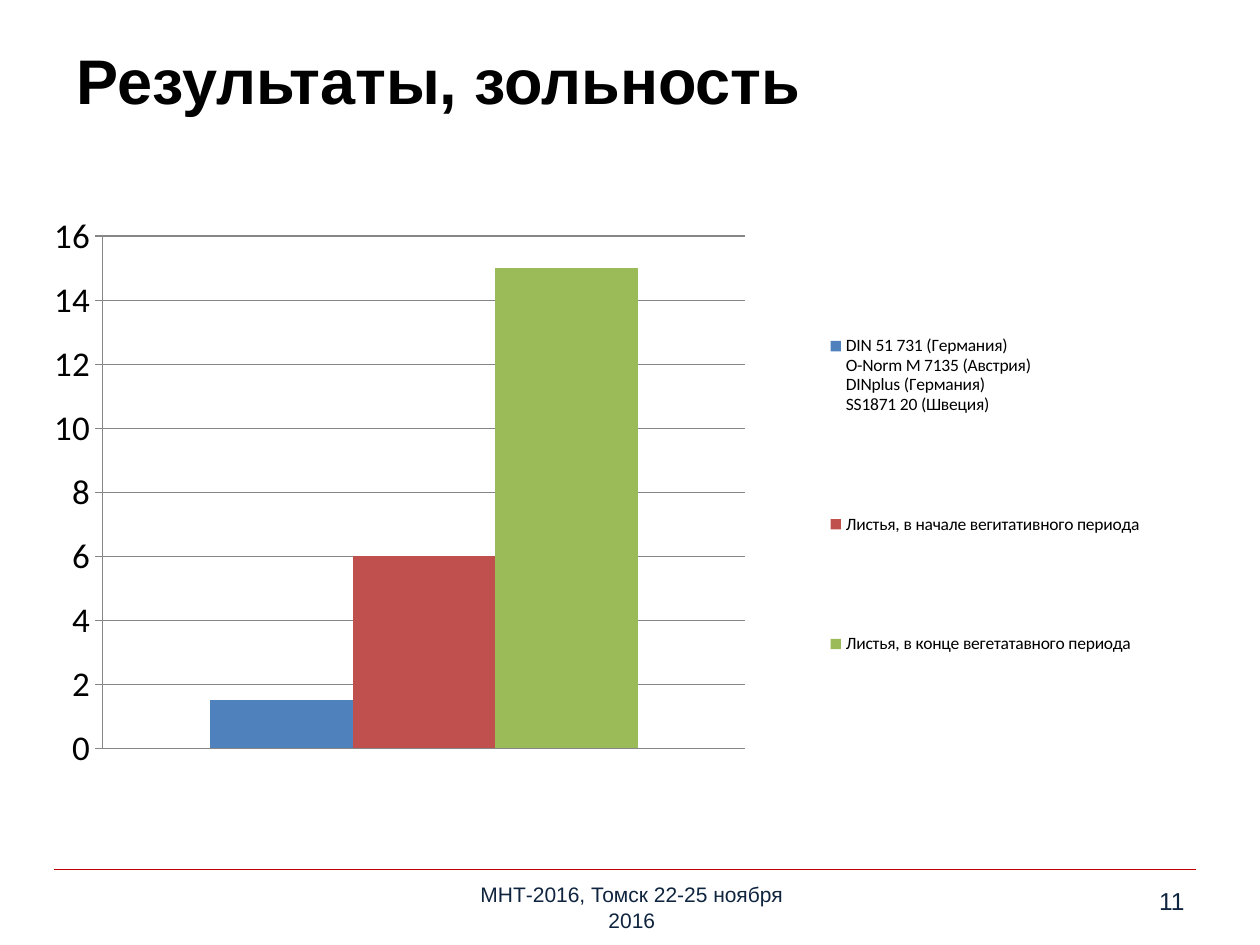
from dataclasses import dataclass

from lxml import etree
from pptx import Presentation
from pptx.chart.data import CategoryChartData
from pptx.dml.color import RGBColor
from pptx.enum.chart import XL_CHART_TYPE, XL_LEGEND_POSITION, XL_TICK_MARK
from pptx.enum.text import MSO_ANCHOR, PP_ALIGN
from pptx.oxml import parse_xml
from pptx.oxml.ns import nsdecls, qn
from pptx.util import Inches, Pt

BAR = XL_CHART_TYPE.COLUMN_CLUSTERED
SIDE = XL_LEGEND_POSITION.RIGHT
OUT = XL_TICK_MARK.OUTSIDE
MID, TOP = MSO_ANCHOR.MIDDLE, MSO_ANCHOR.TOP
LEFT, MIDST, RIGHT = PP_ALIGN.LEFT, PP_ALIGN.CENTER, PP_ALIGN.RIGHT

BLACK = RGBColor(0, 0, 0)
NAVY = RGBColor(0x0F, 0x24, 0x3E)
RED = RGBColor(0xC0, 0, 0)
GREY = RGBColor(0x86, 0x86, 0x86)
BLUE = RGBColor(0x4F, 0x81, 0xBD)
ROSE = RGBColor(0xC0, 0x50, 0x4D)
GREEN = RGBColor(0x9B, 0xBB, 0x59)

WIDE, HIGH = Inches(10), Inches(7.5)
COL, ROW = WIDE / 100, HIGH / 75


@dataclass
class Box:
    col: float
    row: float
    cols: float
    rows: float

    def emu(self) -> tuple:
        return (round(self.col * COL), round(self.row * ROW),
                round(self.cols * COL), round(self.rows * ROW))


@dataclass
class Label:
    lines: list
    box: Box
    size: float
    align: int
    anchor: int


@dataclass
class Bar:
    name: str
    value: float
    color: RGBColor


LABELS = [
    Label(["11"], Box(71.7, 69.5, 23.3, 4), 14, RIGHT, MID),
    Label(["МНТ-2016, Томск 22-25 ноября", "2016"],
          Box(34.3, 69, 31.7, 6), 12, MIDST, MID),
]
BARS = [
    Bar("DIN 51\u00a0731 (Германия)\nO-Norm\u00a0M 7135 (Австрия)\n"
        "DINplus (Германия)\nSS1871\u00a020 (Швеция)", 1.5, BLUE),
    Bar("Листья, в начале вегитативного периода", 6, ROSE),
    Bar("Листья, в конце вегетатавного периода", 15, GREEN),
]


def style(item, form: dict) -> None:
    for key, val in form.items():
        setattr(item, key, val)


def paint(font, color: RGBColor, form: dict) -> None:
    style(font, form)
    font.color.rgb = color


def write(frame, label: Label, color: RGBColor, bold: bool = False) -> None:
    style(frame, {"word_wrap": True, "vertical_anchor": label.anchor})
    for num, line in enumerate(label.lines):
        para = frame.add_paragraph() if num else frame.paragraphs[0]
        para.alignment = label.align
        run = para.add_run()
        run.text = line
        paint(run.font, color,
              {"name": "Arial", "size": Pt(label.size), "bold": bold})


def head(slide) -> None:
    label = Label(["Результаты, зольность"], Box(5.1, 0, 94.9, 12.6), 36, LEFT, MID)
    title = slide.shapes.title
    sides = ("left", "top", "width", "height")
    style(title, dict(zip(sides, label.box.emu())))
    write(title.text_frame, label, BLACK, True)


def rule(slide, box: Box) -> None:
    left, top, wide, high = box.emu()
    line = slide.shapes.add_connector(1, left, top, left + wide, top + high)
    line.line.color.rgb = RED
    line.line.width = Pt(0.75)
    etree.SubElement(line._element.spPr, qn("a:effectLst"))


def layout(box: Box, inner: bool = False):
    target = '<c:layoutTarget val="inner"/>' if inner else ""
    modes = "".join(f'<c:{side}Mode val="edge"/>' for side in "xy")
    sizes = "".join(f'<c:{key} val="{val}"/>' for key, val in
                    zip("xywh", (box.col, box.row, box.cols, box.rows)))
    return parse_xml(f'<c:layout {nsdecls("c")}><c:manualLayout>'
                     f'{target}{modes}{sizes}</c:manualLayout></c:layout>')


def place(node, new, after: str = "") -> None:
    for old in node.findall(qn("c:layout")):
        node.remove(old)
    if after:
        node.find(qn(after)).addnext(new)
    else:
        node.insert(0, new)


def graph(slide, box: Box) -> None:
    data = CategoryChartData()
    data.categories = ["1"]
    for bar in BARS:
        data.add_series(bar.name, [bar.value])
    chart = slide.shapes.add_chart(BAR, *box.emu(), data).chart
    style(chart, {"has_title": False, "has_legend": True})
    paint(chart.font, BLACK, {"name": "Calibri", "size": Pt(10)})
    plot = chart.plots[0]
    style(plot, {"gap_width": 150, "overlap": 0, "vary_by_categories": False})
    for bar, series in zip(BARS, plot.series):
        series.format.fill.solid()
        series.format.fill.fore_color.rgb = bar.color
    chart.category_axis.visible = False
    axis = chart.value_axis
    style(axis, {"minimum_scale": 0, "maximum_scale": 16, "major_unit": 2,
                 "major_tick_mark": OUT, "has_major_gridlines": True})
    paint(axis.tick_labels.font, BLACK, {"name": "Calibri", "size": Pt(20)})
    for part in (axis, axis.major_gridlines):
        part.format.line.color.rgb = GREY
        part.format.line.width = Pt(0.75)
    style(chart.legend, {"position": SIDE, "include_in_layout": False})
    area = chart._chartSpace.chart.plotArea
    place(area, layout(Box(0.04, 0.04, 0.55, 0.93), True))
    place(chart.legend._element, layout(Box(0.65, 0.04, 0.29, 0.94)), "c:legendPos")


def main() -> None:
    deck = Presentation()
    style(deck, {"slide_width": WIDE, "slide_height": HIGH})
    slide = deck.slides.add_slide(deck.slide_layouts[5])
    head(slide)
    for label in LABELS:
        box = slide.shapes.add_textbox(*label.box.emu())
        write(box.text_frame, label, NAVY)
    rule(slide, Box(4.3, 69, 90.6, 0))
    graph(slide, Box(4.3, 17, 92.9, 44.1))
    deck.save("out.pptx")


if __name__ == "__main__":
    main()
